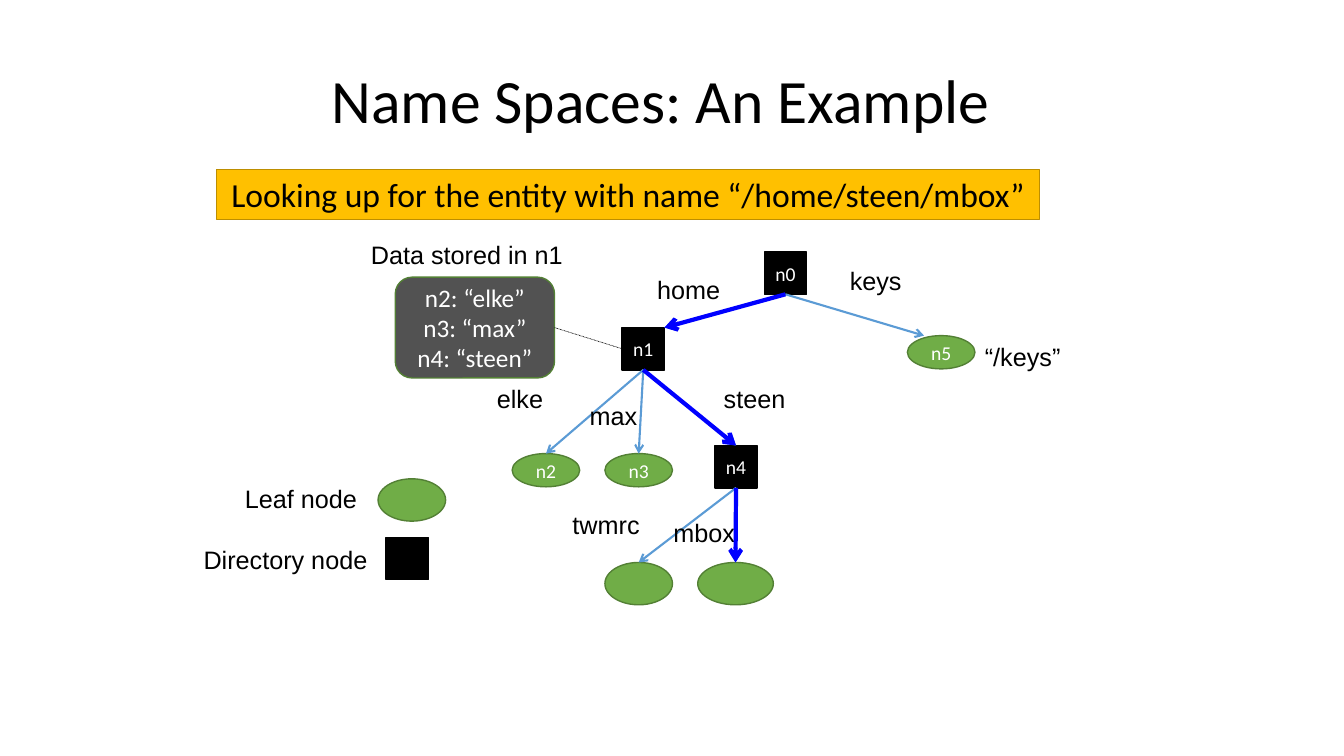
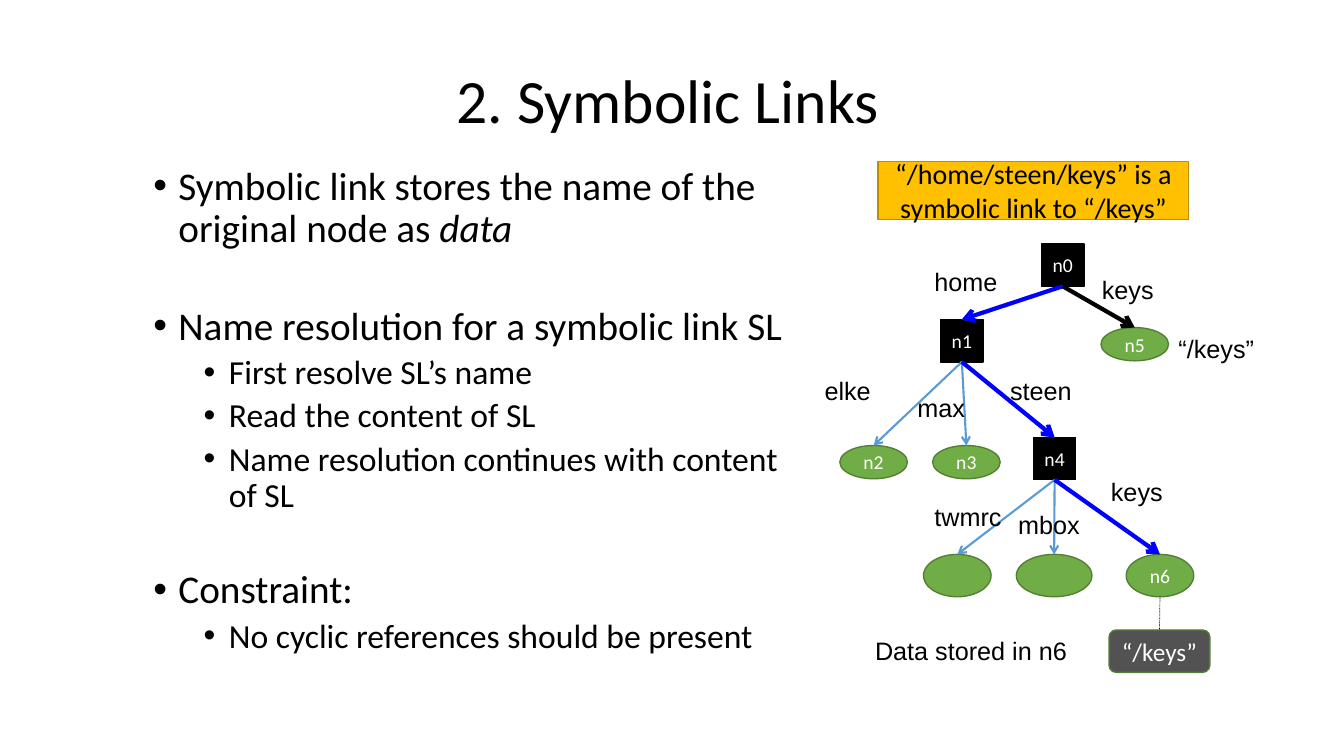
from collections import namedtuple

from lxml.etree import SubElement
from pptx import Presentation
from pptx.dml.color import RGBColor
from pptx.enum.dml import MSO_LINE
from pptx.enum.shapes import MSO_CONNECTOR, MSO_SHAPE
from pptx.enum.text import MSO_ANCHOR, MSO_AUTO_SIZE, PP_ALIGN
from pptx.oxml.ns import qn
from pptx.util import Inches, Pt

BLACK, WHITE = "000000", "FFFFFF"
BLUE, SKY = "0000FF", "5B9BD5"
GOLD, DARK_GOLD = "FFC000", "BD8E00"
GREEN, DARK_GREEN = "70AD47", "538035"
GRAY = "525252"
SQUARE = 0.42
LEAF = 0.67

Box = namedtuple("Box", "left top width height")


def color(value):
    """Turn a hex string into a colour."""
    return RGBColor.from_string(value)


def lengths(box):
    """Turn a box in inches into lengths."""
    return [Inches(value) for value in box]


def add_span(para, text, size, ink=BLACK, font="Calibri", italic=False):
    """Add one formatted run to a paragraph."""
    span = para.add_run()
    span.text = text
    span.font.size = Pt(size)
    span.font.name = font
    span.font.italic = italic
    span.font.color.rgb = color(ink)


def add_panel(page, kind, box, fill, edge, lines=(), size=14, ink=WHITE, inset=0.0):
    """Draw a filled shape with centred lines of text."""
    panel = page.shapes.add_shape(kind, *lengths(box))
    panel.shadow.inherit = False
    panel.fill.solid()
    panel.fill.fore_color.rgb = color(fill)
    panel.line.color.rgb = color(edge)
    panel.line.width = Pt(1)
    frame = panel.text_frame
    frame.word_wrap = True
    frame.vertical_anchor = MSO_ANCHOR.MIDDLE
    frame.margin_left = frame.margin_right = Inches(inset)
    frame.margin_top = frame.margin_bottom = 0
    for index, text in enumerate(lines):
        para = frame.add_paragraph() if index else frame.paragraphs[0]
        para.alignment = PP_ALIGN.CENTER
        add_span(para, text, size, ink)
    return panel


def add_banner(page, box, text, size):
    """Draw the gold statement band."""
    add_panel(page, MSO_SHAPE.RECTANGLE, box, GOLD, DARK_GOLD, [text], size, BLACK, 0.1)


def add_directory(page, left, top, *name):
    """Draw a directory node."""
    box = Box(left, top, SQUARE, SQUARE)
    return add_panel(page, MSO_SHAPE.RECTANGLE, box, BLACK, BLACK, name)


def add_leaf(page, left, top, *name, width=LEAF, height=SQUARE):
    """Draw a leaf node."""
    box = Box(left, top, width, height)
    return add_panel(page, MSO_SHAPE.OVAL, box, GREEN, DARK_GREEN, name)


def add_data(page, box, lines):
    """Draw the rounded panel holding a node's data."""
    return add_panel(page, MSO_SHAPE.ROUNDED_RECTANGLE, box, GRAY, DARK_GREEN, lines, 18)


def add_label(page, text, left, top, width=1.0):
    """Add a plain label."""
    label = page.shapes.add_textbox(*lengths(Box(left, top, width, 0.4)))
    label.text_frame.word_wrap = True
    add_span(label.text_frame.paragraphs[0], text, 18, font="Arial")


def add_line(page, start, end, ink, width):
    """Draw a straight connector between two points."""
    line = page.shapes.add_connector(MSO_CONNECTOR.STRAIGHT, *start, *end)
    line.line.color.rgb = color(ink)
    line.line.width = Pt(width)
    SubElement(line._element.spPr, qn("a:effectLst"))
    return line


def add_dotted(page, start, end):
    """Draw a thin dotted line from a node to its data."""
    add_line(page, start, end, BLACK, 0.5).line.dash_style = MSO_LINE.ROUND_DOT


def add_arrow(page, parent, child, reach=0.0, ink=SKY, width=1.5):
    """Draw an arrow from the foot of a parent to the head of a child."""
    start = (parent.left + parent.width // 2, parent.top + parent.height)
    end = (child.left + child.width // 2 + Inches(reach), child.top)
    arrow = add_line(page, start, end, ink, width)
    if not reach:
        arrow.begin_connect(parent, 2)
        arrow.end_connect(child, 0)
    SubElement(arrow.line._get_or_add_ln(), qn("a:tailEnd"), type="arrow")


def add_tree(page, left, top, stem, root, keys, labels, reaches):
    """Draw the name graph and return its nodes by name."""
    nodes = {
        "n0": add_directory(page, left + root, top, "n0"),
        "n1": add_directory(page, left + stem, top + 0.75, "n1"),
        "n4": add_directory(page, left + stem + 0.92, top + 1.92, "n4"),
        "n5": add_leaf(page, left + keys, top + 0.83, "n5", height=0.33),
        "n2": add_leaf(page, left + 0.25, top + 2, "n2", height=0.33),
        "n3": add_leaf(page, left + 1.17, top + 2, "n3", height=0.33),
        "mbox": add_leaf(page, left + stem + 0.75, top + 3.08, width=0.75),
        "twmrc": add_leaf(page, left + stem - 0.17, top + 3.08),
    }
    edges = ["n0 n5", "n0 n1", "n1 n3", "n1 n4", "n1 n2", "n4 mbox", "n4 twmrc"]
    for edge in edges:
        parent, child = edge.split()
        add_arrow(page, nodes[parent], nodes[child], reaches.get(child, 0))
    shared = [("max", 0.92, 1.42), ("elke", 0, 1.25), ("“/keys”", keys + LEAF, 0.84)]
    for text, across, down in shared + labels:
        add_label(page, text, left + across, top + down)
    return nodes


def add_route(page, nodes, names, reaches, ink=BLUE):
    """Mark a lookup path with thick arrows."""
    for parent, child in zip(names, names[1:]):
        add_arrow(page, nodes[parent], nodes[child], reaches.get(child, 0), ink, 3)


def add_legend(page, left, top):
    """Draw the key to the node shapes."""
    add_leaf(page, left + 1.83, top)
    add_directory(page, left + 1.91, top + 0.58)
    add_label(page, "Leaf node", left + 0.41, top, 1.5)
    add_label(page, "Directory node", left, top + 0.6, 1.92)


def add_page(deck, layout, title):
    """Add a slide with the shared title style."""
    page = deck.slides.add_slide(deck.slide_layouts[layout])
    holder = page.shapes.title
    holder.left, holder.top, holder.width, holder.height = lengths(Box(1.92, 0.3, 9.41, 1.45))
    frame = holder.text_frame
    frame.auto_size = MSO_AUTO_SIZE.NONE
    frame.vertical_anchor = MSO_ANCHOR.MIDDLE
    para = frame.paragraphs[0]
    para.alignment = PP_ALIGN.CENTER
    para.line_spacing = 0.9
    add_span(para, title, 44)
    return page


def add_bullets(page, box, items):
    """Fill the body placeholder with a two-level list."""
    holder = page.placeholders[1]
    holder.left, holder.top, holder.width, holder.height = lengths(box)
    frame = holder.text_frame
    frame.auto_size = MSO_AUTO_SIZE.NONE
    frame.vertical_anchor = MSO_ANCHOR.TOP
    for index, (level, before, text, stress) in enumerate(items):
        para = frame.add_paragraph() if index else frame.paragraphs[0]
        para.level = level
        para.line_spacing = 0.9
        para.space_before = Pt(before)
        properties = para._p.get_or_add_pPr()
        properties.set("marL", str(Inches(0.75 + level * 0.5)))
        properties.set("indent", str(Inches(-0.25)))
        SubElement(properties, qn("a:buFont"), typeface="Arial")
        SubElement(properties, qn("a:buChar"), char="•")
        size = 24 if level else 28
        add_span(para, text, size)
        if stress:
            add_span(para, stress, size, italic=True)


def build_example(deck):
    """Build the name space example slide."""
    page = add_page(deck, 5, "Name Spaces: An Example ")
    add_banner(page, Box(2.15, 1.68, 8.16, 0.5),
               "Looking up for the entity with name “/home/steen/mbox”", 24)
    labels = [("home", 1.59, 0.17), ("keys", 3.5, 0.08), ("steen", 2.25, 1.25),
              ("twmrc", 0.75, 2.5), ("mbox", 1.75, 2.58)]
    reaches = {"n1": 0.21, "n5": -0.17}
    nodes = add_tree(page, 4.83, 2.5, 1.34, 2.75, 4.17, labels, reaches)
    add_legend(page, 1.92, 4.75)
    data = add_data(page, Box(3.92, 2.75, 1.58, 1),
                    ["n2: “elke”", "n3: “max”", "n4: “steen”"])
    add_label(page, "Data stored in n1", 3.58, 2.33, 2.25)
    first = nodes["n1"]
    add_dotted(page, (first.left, first.top + first.height // 2),
               (data.left + data.width, data.top + data.height // 2))
    add_route(page, nodes, ["n0", "n1", "n4", "mbox"], reaches)


def build_links(deck):
    """Build the symbolic links slide."""
    page = add_page(deck, 1, "2. Symbolic Links")
    add_bullets(page, Box(0.92, 1.6, 7.16, 5.42), [
        (0, 0, "Symbolic link stores the name of the original node as ", "data"),
        (0, 39.5, "Name resolution for a symbolic link SL", ""),
        (1, 5, "First resolve SL’s name", ""),
        (1, 5, "Read the content of SL", ""),
        (1, 5, "Name resolution continues with content of SL", ""),
        (0, 39.5, "Constraint:", ""),
        (1, 5, "No cyclic references should be present", ""),
    ])
    add_banner(page, Box(8.71, 1.6, 3.08, 0.58),
               "“/home/steen/keys” is a symbolic link to “/keys”", 20)
    labels = [("home", 1.09, 0.17), ("keys", 2.75, 0.25), ("steen", 1.84, 1.25),
              ("twmrc", 1.09, 2.5), ("mbox", 1.92, 2.58), ("keys", 2.84, 2.26)]
    nodes = add_tree(page, 8.08, 2.42, 1.25, 2.25, 2.84, labels, {})
    link = nodes["n6"] = add_leaf(page, 11.17, 5.5, "n6")
    data = add_data(page, Box(11, 6.25, 1, SQUARE), ["“/keys”"])
    add_dotted(page, (link.left + link.width // 2, link.top + link.height),
               (data.left + data.width // 2, data.top))
    add_label(page, "Data stored in n6", 8.58, 6.25, 2.25)
    add_route(page, nodes, ["n0", "n1", "n4", "n6"], {})
    add_route(page, nodes, ["n0", "n5"], {}, BLACK)


def main():
    """Build and save the deck."""
    deck = Presentation()
    deck.slide_width, deck.slide_height = Inches(13.33), Inches(7.5)
    build_example(deck)
    build_links(deck)
    deck.save("out.pptx")


if __name__ == "__main__":
    main()
